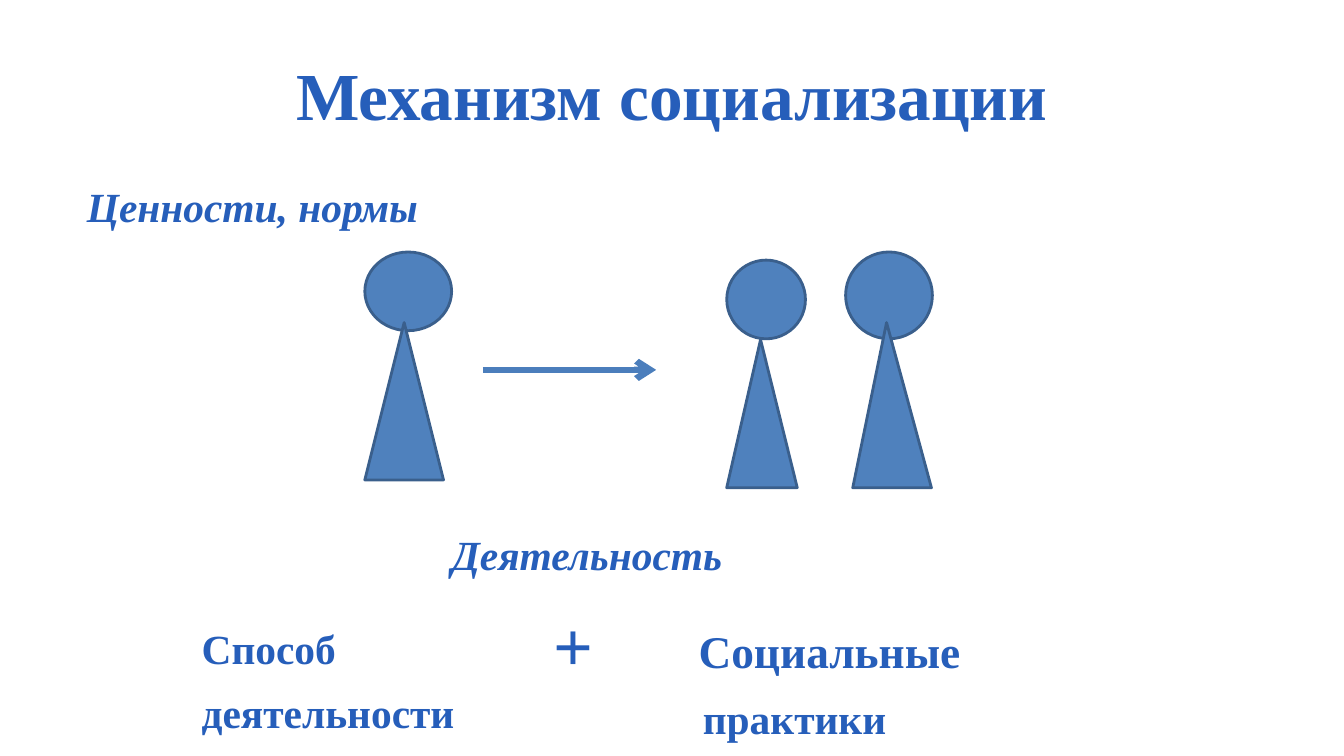
"""Builds the slide on the mechanism of socialisation."""
from dataclasses import dataclass

from lxml.etree import SubElement as sub
from pptx import Presentation
from pptx.dml.color import RGBColor as Rgb
from pptx.enum.shapes import MSO_CONNECTOR as Link, MSO_SHAPE as Kind
from pptx.enum.text import MSO_ANCHOR as Anchor, MSO_AUTO_SIZE as Fit, PP_ALIGN as Align
from pptx.oxml.ns import qn
from pptx.util import Pt


@dataclass(frozen=True)
class Theme:
    face: str = "Times New Roman"
    ink: Rgb = Rgb(0x26, 0x5E, 0xBA)
    fill: Rgb = Rgb(0x4F, 0x81, 0xBD)
    edge: Rgb = Rgb(0x3A, 0x5F, 0x8C)
    arrow: Rgb = Rgb(0x4B, 0x7E, 0xBC)
    head: float = 48
    text: float = 29.6
    term: float = 32.4
    sign: float = 50


class Deck:
    def __init__(self, theme):
        self.theme = theme
        self.file = Presentation()
        self.file.slide_width, self.file.slide_height = Pt(960), Pt(540)
        self.slide = self.file.slides.add_slide(self.file.slide_layouts[1])

    def place(self, item, box):
        item.left, item.top, item.width, item.height = map(Pt, box)
        frame = item.text_frame
        frame.auto_size = Fit.NONE
        frame.word_wrap = True
        return frame

    def style(self, run, size, slant=False):
        font = run.font
        font.name, font.size = self.theme.face, Pt(size)
        font.bold, font.italic = True, slant
        font.color.rgb = self.theme.ink

    def title(self, text, box):
        frame = self.place(self.slide.shapes.title, box)
        frame.vertical_anchor = Anchor.MIDDLE
        frame.text = text
        para = frame.paragraphs[0]
        para.alignment = Align.CENTER
        self.style(para.runs[0], self.theme.head)

    def lines(self, item, rows, box):
        frame = self.place(item, box)
        frame.vertical_anchor = Anchor.TOP
        frame.margin_left = frame.margin_top = 0
        frame.text = "\n".join(row[0] for row in rows)
        for para, (_, size, gap, left, slant) in zip(frame.paragraphs, rows):
            para.space_before = Pt(gap)
            props = para._p.get_or_add_pPr()
            props.set("marL", str(Pt(left)))
            props.set("indent", "0")
            sub(props, qn("a:buNone"))
            self.style(para.runs[0], size, slant)

    def body(self, rows, box):
        self.lines(self.slide.placeholders[1], rows, box)

    def label(self, rows, box):
        self.lines(self.slide.shapes.add_textbox(*map(Pt, box)), rows, box)

    def shape(self, kind, box, tip=None):
        item = self.slide.shapes.add_shape(kind, *map(Pt, box))
        item.shadow.inherit = False
        item.fill.solid()
        item.fill.fore_color.rgb = self.theme.fill
        item.line.color.rgb = self.theme.edge
        item.line.width = Pt(2)
        if tip is not None:
            item.adjustments[0] = tip

    def person(self, head, torso, tip):
        self.shape(Kind.OVAL, head)
        self.shape(Kind.ISOSCELES_TRIANGLE, torso, tip)

    def arrow(self, *ends):
        item = self.slide.shapes.add_connector(Link.STRAIGHT, *map(Pt, ends))
        item.line.color.rgb = self.theme.arrow
        item.line.width = Pt(4.5)
        sub(item.line._get_or_add_ln(), qn("a:tailEnd"), type="arrow")
        sub(item._element.spPr, qn("a:effectLst"))

    def save(self):
        self.file.save("out.pptx")


def main():
    theme = Theme()
    deck = Deck(theme)
    deck.title("Механизм социализации", (48, 21.6, 864, 90))
    deck.body([
        ("Ценности, нормы", theme.text, 0, 14, True),
        ("Деятельность", theme.text, 213.4, 274.6, True),
        ("Способ", theme.text, 31.5, 96, False),
        ("деятельности", theme.text, 10.5, 96, False),
    ], (48, 129, 864, 356.4))
    deck.label([("+", theme.sign, 0, 0, False)], (395.6, 429.7, 60, 58))
    deck.label([
        ("Социальные", theme.term, 0, 0, False),
        ("практики", theme.text, 11, 3, False),
    ], (499, 445.4, 260, 86))
    people = [
        ((260.6, 180, 62, 56.2), (260.6, 230.4, 56.2, 112.4), 0.5),
        ((519.1, 185.8, 56.2, 56.2), (519.1, 242.6, 50.4, 105.8), 0.48),
        ((604, 180, 62, 62), (609.1, 230.4, 56.2, 118), 0.43),
    ]
    for head, torso, tip in people:
        deck.person(head, torso, tip)
    deck.arrow(345, 264.2, 468.7, 264.2)
    deck.save()


if __name__ == "__main__":
    main()
